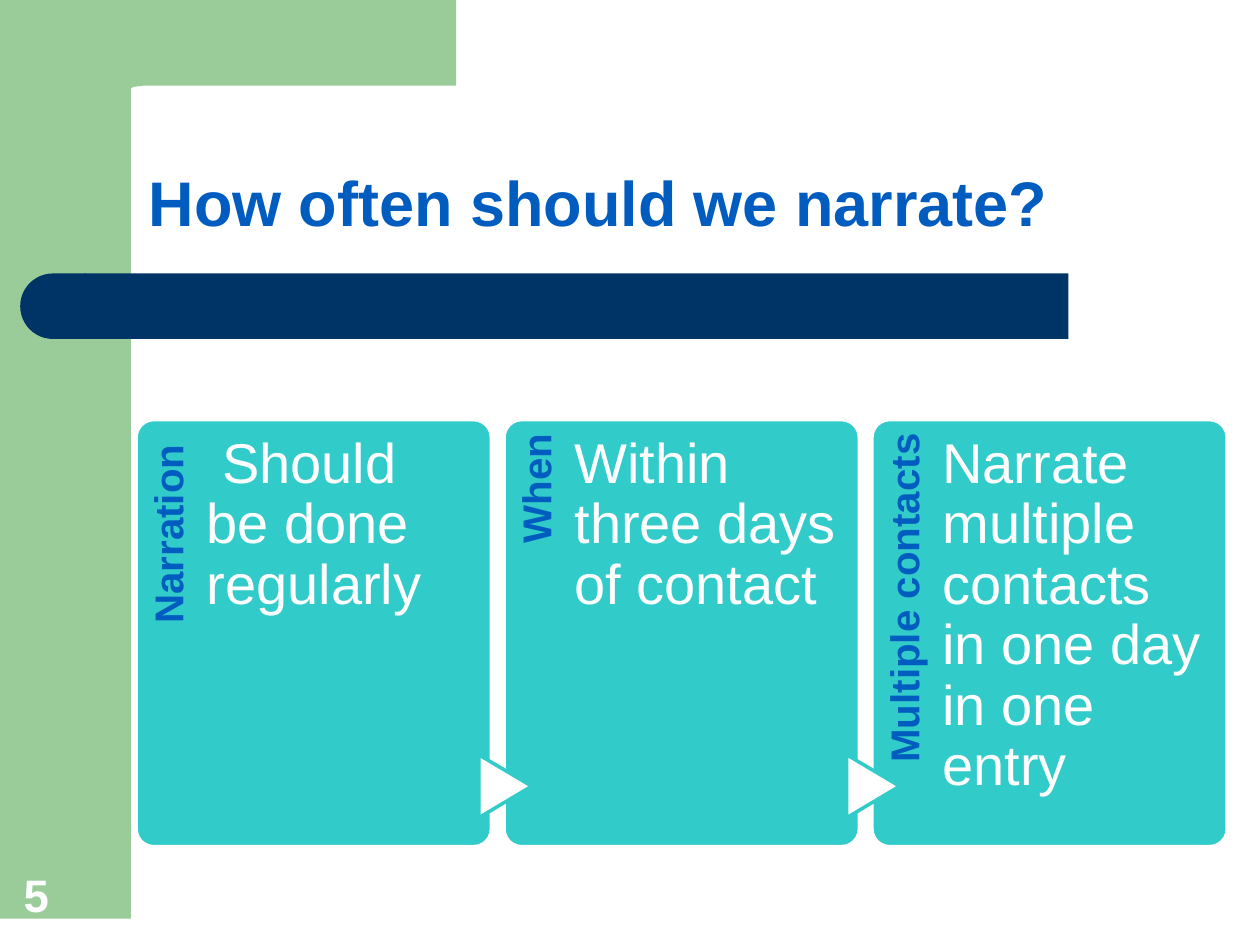
from pptx import Presentation
from pptx.dml.color import RGBColor
from pptx.enum.shapes import MSO_SHAPE
from pptx.enum.text import MSO_ANCHOR, PP_ALIGN
from pptx.util import Inches, Pt

GREEN, NAVY, TEAL, BLUE, WHITE = "99CC99", "003366", "31CBC9", "005CBF", "FFFFFF"


def paint(shape, fill, line=None):
    shape.shadow.inherit = False
    shape.fill.solid()
    shape.fill.fore_color.rgb = RGBColor.from_string(fill)
    if line:
        shape.line.color.rgb = RGBColor.from_string(line)
        shape.line.width = Pt(2)
    else:
        shape.line.fill.background()


def write(shape, text, size, color, bold=False, pad=(0.1, 0.05, 0.1, 0.05),
          anchor=MSO_ANCHOR.TOP, **para):
    """Fill a shape with one paragraph; pad is left, top, right, bottom."""
    frame = shape.text_frame
    frame.word_wrap = True
    frame.vertical_anchor = anchor
    for side, gap in zip(("left", "top", "right", "bottom"), pad):
        setattr(frame, f"margin_{side}", Inches(gap))
    line = frame.paragraphs[0]
    for key, value in para.items():
        setattr(line, key, value)
    run = line.add_run()
    run.text = text
    look = {"name": "Arial", "size": Pt(size), "bold": bold}
    for key, value in look.items():
        setattr(run.font, key, value)
    run.font.color.rgb = RGBColor.from_string(color)


prs = Presentation()
prs.slide_width, prs.slide_height = Inches(10), Inches(7.5)
slide = prs.slides.add_slide(prs.slide_layouts[5])
shapes = slide.shapes
title = shapes.title

# Green corner with a rounded inner edge
side = shapes.add_shape(MSO_SHAPE.RECTANGLE, 0, 0, Inches(1.04), Inches(7.29))
paint(side, GREEN)
edge = [(3.62, 0.68), (1.14, 0.68), (1.06, 0.69), (0.94, 0.75), (0.87, 0.85),
        (0.85, 0.94), (0.85, 1.04), (0.5, 1.04), (0.5, 0)]
pen = shapes.build_freeform(Inches(3.62), 0)
pen.add_line_segments([(Inches(x), Inches(y)) for x, y in edge])
paint(pen.convert_to_shape(), GREEN)

# Navy bar with a round left end
bar = shapes.add_shape(MSO_SHAPE.RECTANGLE, Inches(0.67), Inches(2.17),
                       Inches(7.81), Inches(0.52))
cap = shapes.add_shape(MSO_SHAPE.FLOWCHART_DELAY, Inches(0.16), Inches(2.17),
                       Inches(0.52), Inches(0.52))
cap.rotation = 180
for part in (bar, cap):
    paint(part, NAVY)

number = shapes.add_textbox(Inches(0.09), Inches(6.83), Inches(0.64), Inches(0.53))
write(number, "5", 26, WHITE, bold=True, anchor=MSO_ANCHOR.BOTTOM)

# Three cards, with an arrow over each gap
cards = [
    ("Narration ", " Should be done regularly"),
    ("When", "Within three days of contact"),
    ("Multiple contacts", "Narrate multiple contacts in one day in one entry"),
]
top, wide, high, step = 3.33, 2.82, 3.39, 2.92
for i, (head, body) in enumerate(cards):
    left = 1.08 + i * step
    card = shapes.add_shape(MSO_SHAPE.ROUNDED_RECTANGLE, Inches(left), Inches(top),
                            Inches(wide), Inches(high))
    card.adjustments[0] = 0.05
    paint(card, TEAL, WHITE)

    label = shapes.add_textbox(Inches(left - 1.1), Inches(4.44),
                               Inches(2.78), Inches(0.56))
    label.rotation = 270
    write(label, head, 23, BLUE, bold=True, pad=(0, 0.09, 0.11, 0),
          alignment=PP_ALIGN.RIGHT, line_spacing=0.9)

    if i:
        arrow = shapes.add_shape(MSO_SHAPE.FLOWCHART_EXTRACT, Inches(left - 0.24),
                                 Inches(6.03), Inches(0.5), Inches(0.42))
        arrow.rotation = 90
        paint(arrow, WHITE, TEAL)

    text = shapes.add_textbox(Inches(left + 0.56), Inches(top),
                              Inches(2.1), Inches(high))
    write(text, body, 32, WHITE, pad=(0, 0.12, 0, 0), line_spacing=0.9)

place = {"left": 1.08, "top": 1.25, "width": 7.92, "height": 0.64}
for key, value in place.items():
    setattr(title, key, Inches(value))
write(title, "How often should we narrate?", 36, BLUE, bold=True,
      alignment=PP_ALIGN.LEFT)

prs.save("out.pptx")
